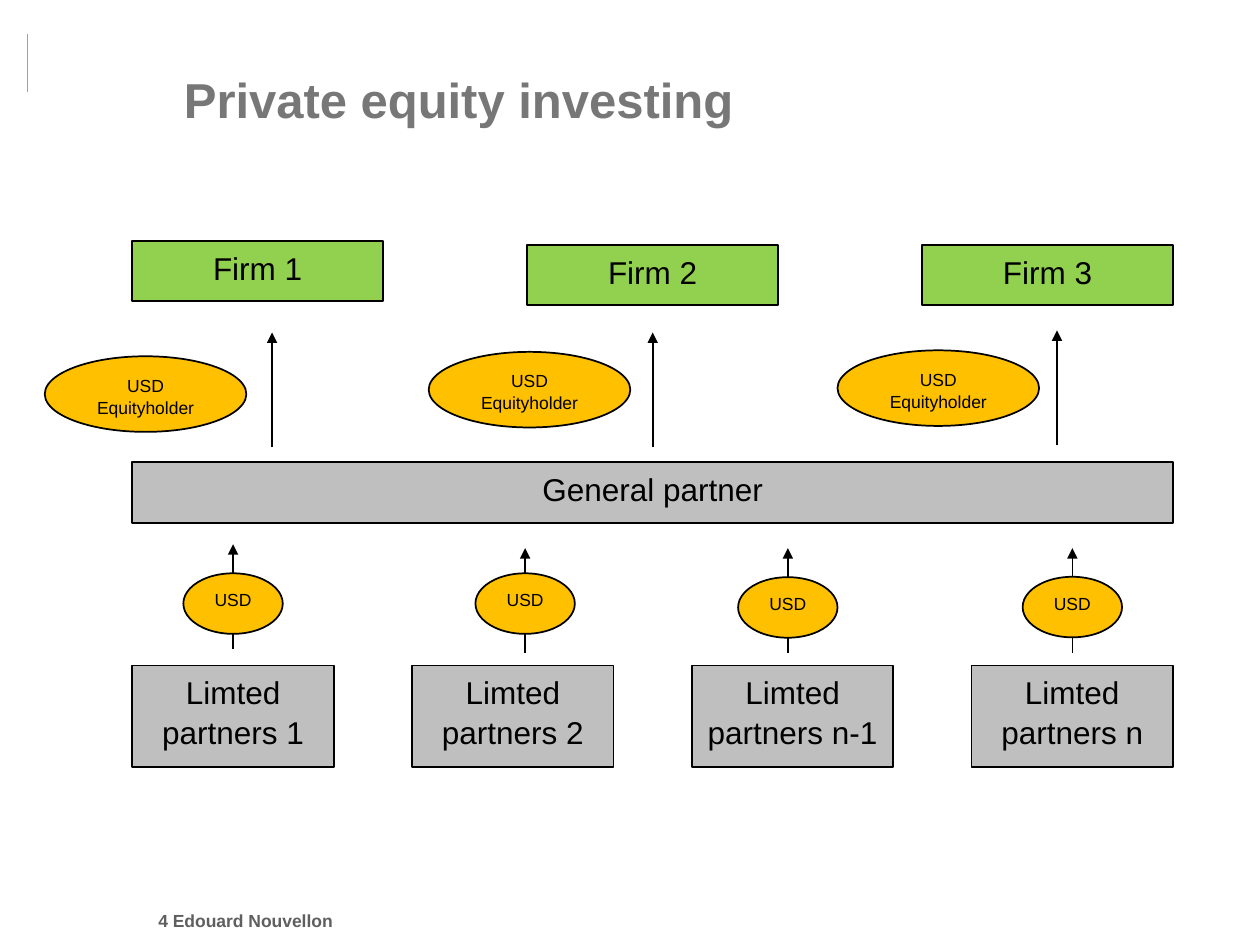
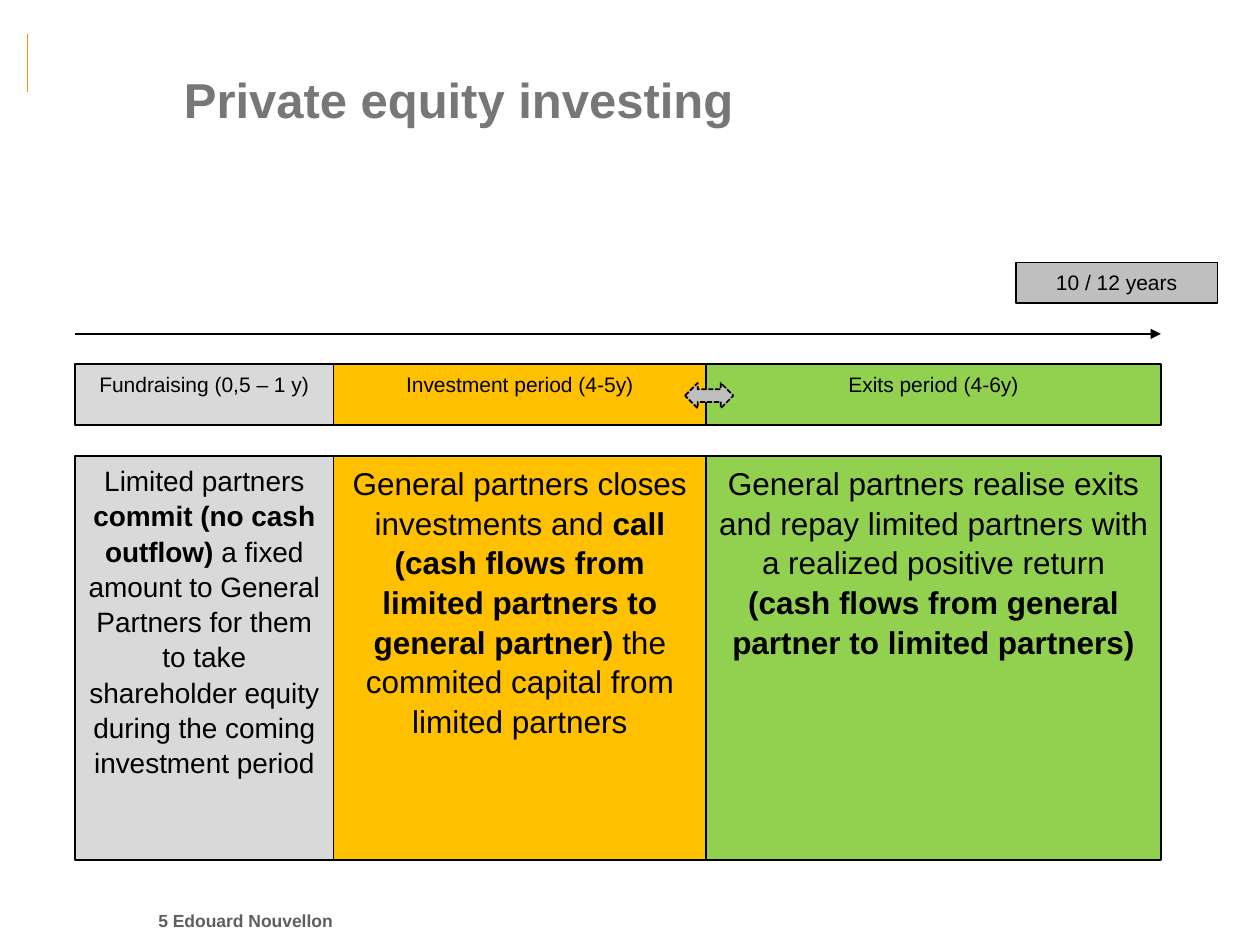
from dataclasses import dataclass

from lxml import etree
from pptx import Presentation
from pptx.dml.color import RGBColor
from pptx.enum import dml, shapes, text
from pptx.oxml import ns
from pptx.util import Pt


@dataclass(frozen=True)
class Theme:
    font: str = "Arial"
    black: str = "000000"
    title_grey: str = "777777"
    footer_grey: str = "5F5F5F"
    accent: str = "F5910B"
    grey: str = "BFBFBF"
    light_grey: str = "D9D9D9"
    amber: str = "FFC000"
    green: str = "92D050"
    title_size: float = 28
    large: float = 18
    medium: float = 16
    label: float = 12
    small: float = 10
    line_width: float = 1
    line_spacing: float = 1.05


THEME = Theme()
RECTANGLE = shapes.MSO_SHAPE.RECTANGLE
ELLIPSE = shapes.MSO_SHAPE.OVAL
LEFT_EDGE = 75.6
BAR_HEIGHT = 34.6


def rgb(colour):
    return RGBColor.from_string(colour)


def write_text(frame, content, size=THEME.large, colour=THEME.black, bold=False,
               align=text.PP_ALIGN.CENTER, anchor=text.MSO_ANCHOR.TOP,
               spacing=THEME.line_spacing, margins=(7.2, 3.6)):
    """Fill a frame; content is a string (one paragraph a line) or (text, bold) spans."""
    frame.word_wrap = True
    frame.auto_size = text.MSO_AUTO_SIZE.NONE
    frame.vertical_anchor = anchor
    frame.margin_left = frame.margin_right = Pt(margins[0])
    frame.margin_top = frame.margin_bottom = Pt(margins[1])
    if isinstance(content, str):
        paragraphs = [[(line, bold)] for line in content.split("\n")]
    else:
        paragraphs = [content]
    for index, spans in enumerate(paragraphs):
        para = frame.add_paragraph() if index else frame.paragraphs[0]
        para.alignment = align
        para.line_spacing = spacing
        para.space_before = para.space_after = Pt(0)
        for words, is_bold in spans:
            span = para.add_run()
            span.text = words
            span.font.name = THEME.font
            span.font.size = Pt(size)
            span.font.bold = is_bold
            span.font.color.rgb = rgb(colour)


def add_box(page, kind, left, top, width, height, fill, content="", **format):
    box = page.shapes.add_shape(kind, Pt(left), Pt(top), Pt(width), Pt(height))
    box.shadow.inherit = False
    box.fill.solid()
    box.fill.fore_color.rgb = rgb(fill)
    box.line.color.rgb = rgb(THEME.black)
    box.line.width = Pt(THEME.line_width)
    if content:
        write_text(box.text_frame, content, **format)
    return box


def add_line(page, start, end, colour=THEME.black, arrow=True):
    line = page.shapes.add_connector(
        shapes.MSO_CONNECTOR.STRAIGHT, *(Pt(value) for value in (*start, *end)))
    line.line.color.rgb = rgb(colour)
    line.line.width = Pt(THEME.line_width)
    if arrow:
        etree.SubElement(line.line._get_or_add_ln(), ns.qn("a:tailEnd"), type="triangle")
    etree.SubElement(line._element.spPr, ns.qn("a:effectLst"))


def add_page(deck, title, number):
    """Add a slide with its title, accent line and numbered footer."""
    page = deck.slides.add_slide(deck.slide_layouts[5])
    heading = page.shapes.title
    heading.left, heading.top = Pt(97.9), Pt(36)
    heading.width, heading.height = Pt(597.6), Pt(58.3)
    write_text(heading.text_frame, title, size=THEME.title_size, bold=True,
               colour=THEME.title_grey, align=text.PP_ALIGN.LEFT, spacing=1.0)
    add_line(page, (15.8, 19.4), (15.8, 52.6), colour=THEME.accent, arrow=False)
    footer = page.shapes.add_textbox(Pt(22.3), Pt(507.6), Pt(167.8), Pt(24.5))
    write_text(footer.text_frame, f"{number} Edouard Nouvellon", size=THEME.small,
               bold=True, colour=THEME.footer_grey, align=text.PP_ALIGN.RIGHT,
               anchor=text.MSO_ANCHOR.BOTTOM, spacing=1.0, margins=(0, 0))
    return page


def draw_structure(page):
    """Limited partners fund the general partner, who invests in firms."""
    for index, name in enumerate(("1", "2", "n-1", "n")):
        add_box(page, RECTANGLE, LEFT_EDGE + index * 159.84, 380.2, 115.2, 58.3,
                THEME.grey, f"Limted partners {name}")
    add_box(page, RECTANGLE, LEFT_EDGE, 264.2, 594.7, BAR_HEIGHT, THEME.grey,
            "General partner")

    # Centre of each cash flow, arrow tip, ellipse top
    commitments = ((133.2, 311, 327.6), (300.1, 313.2, 327.6),
                   (450.2, 313.2, 329.8), (612.8, 313.2, 329.6))
    for centre, tip, top in commitments:
        add_line(page, (centre, tip + 59.7), (centre, tip))
        add_box(page, ELLIPSE, centre - 28.4, top, 56.8, BAR_HEIGHT, THEME.amber,
                "USD", size=THEME.small)

    for index, top in enumerate((137.5, 139.8, 139.8)):
        add_box(page, RECTANGLE, LEFT_EDGE + index * 225.7, top, 143.3, BAR_HEIGHT,
                THEME.green, f"Firm {index + 1}")

    # Arrow position, arrow tip, ellipse left and top
    investments = ((155.5, 190, 25.6, 203.6), (373, 190, 245, 201.1),
                   (604, 188.8, 478.6, 200.2))
    for across, tip, left, top in investments:
        add_line(page, (across, tip + 65.7), (across, tip))
        add_box(page, ELLIPSE, left, top, 115.2, 43.2, THEME.amber,
                "USD\nEquityholder", size=THEME.small)


def draw_timeline(page):
    """The three stages of a fund along its life."""
    add_line(page, (42.9, 190.8), (663.4, 190.8))
    add_box(page, RECTANGLE, 580.5, 150, 115.2, 23, THEME.grey, "10 / 12 years",
            size=THEME.label)
    stages = (
        ("Fundraising (0,5 – 1 y)", 147.7, THEME.light_grey, THEME.medium,
         [("Limited partners ", False), ("commit (no cash outflow) ", True),
          ("a fixed amount to General Partners for them to take shareholder equity "
           "during the coming investment period", False)]),
        ("Investment period (4-5y)", 212.9, THEME.amber, THEME.large,
         [("General partners closes investments and ", False),
          ("call (cash flows from limited partners to general partner) ", True),
          ("the commited capital from limited partners", False)]),
        ("Exits period (4-6y)", 259.9, THEME.green, THEME.large,
         [("General partners realise exits and repay limited partners with a "
           "realized positive return ", False),
          ("(cash flows from general partner to limited partners)", True)]),
    )
    left = 42.9
    for name, width, fill, size, description in stages:
        add_box(page, RECTANGLE, left, 208.2, width, BAR_HEIGHT, fill, name,
                size=THEME.label)
        add_box(page, RECTANGLE, left, 260.5, width, 231, fill, description, size=size)
        left += width
    overlap = add_box(page, shapes.MSO_SHAPE.LEFT_RIGHT_ARROW, 391.5, 218.9, 27.6, 14.4,
                      THEME.grey)
    overlap.line.dash_style = dml.MSO_LINE.SQUARE_DOT


def main():
    deck = Presentation()
    deck.slide_width, deck.slide_height = Pt(720), Pt(540)
    for number, draw in enumerate((draw_structure, draw_timeline), start=4):
        draw(add_page(deck, "Private equity investing", number))
    deck.save("out.pptx")


if __name__ == "__main__":
    main()
